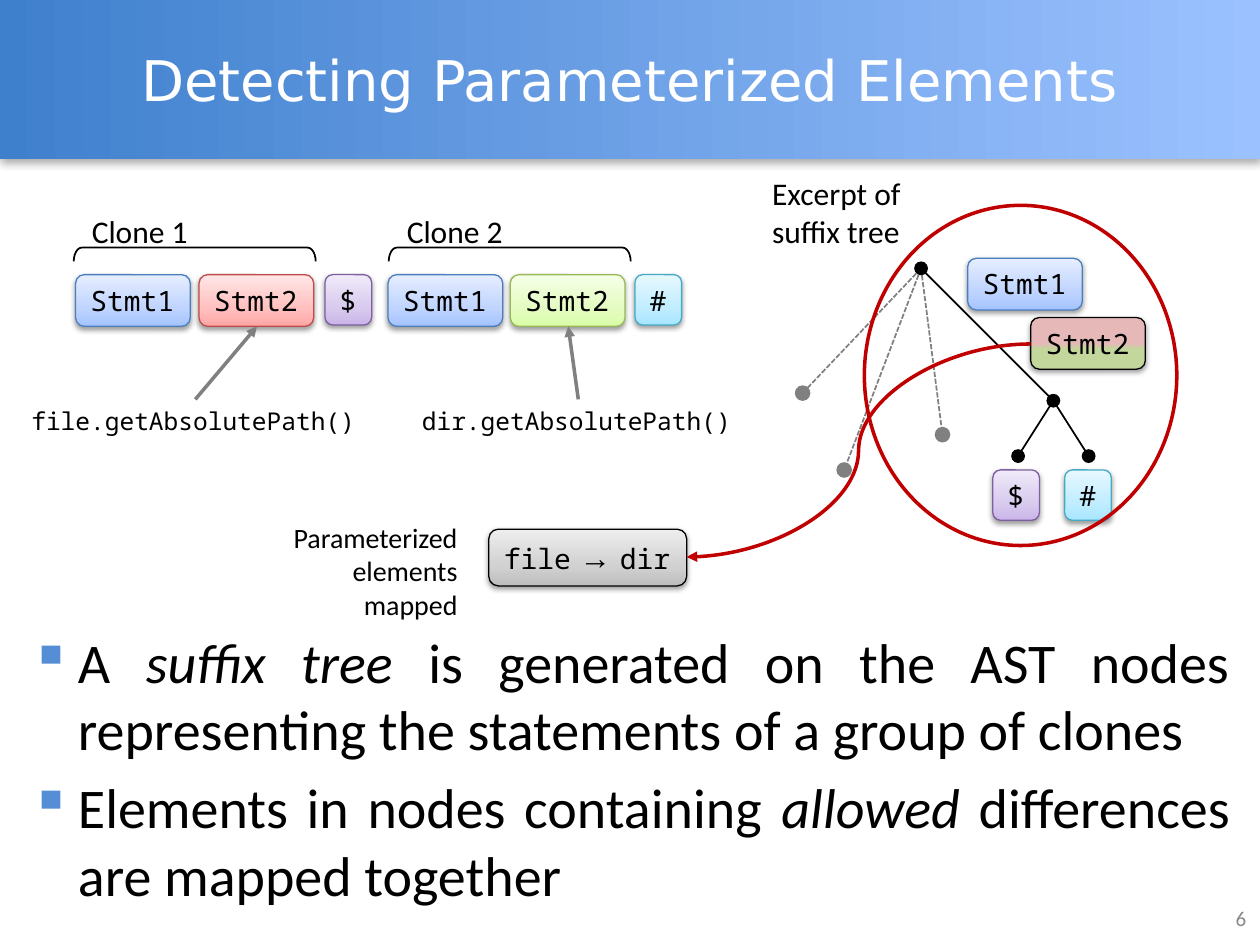
from lxml import etree
from pptx import Presentation
from pptx.dml.color import RGBColor
from pptx.enum.dml import MSO_LINE
from pptx.enum.shapes import MSO_CONNECTOR, MSO_SHAPE
from pptx.enum.text import MSO_ANCHOR, MSO_AUTO_SIZE, PP_ALIGN
from pptx.oxml.ns import qn
from pptx.util import Inches, Pt

LEFT, CENTER, RIGHT, JUSTIFY = PP_ALIGN.LEFT, PP_ALIGN.CENTER, PP_ALIGN.RIGHT, PP_ALIGN.JUSTIFY
TOP, MIDDLE = MSO_ANCHOR.TOP, MSO_ANCHOR.MIDDLE
STRAIGHT, CURVE = MSO_CONNECTOR.STRAIGHT, MSO_CONNECTOR.CURVE

THEME = {
    "title": ("DejaVu Sans", 32, "FFFFFF"),
    "body": ("Calibri", 32, "000000"),
    "label": ("Calibri", 18, "000000"),
    "caption": ("Calibri", 16, "000000"),
    "chip": ("Noto Sans Mono", 16, "000000"),
    "code": ("Noto Sans Mono", 14, "000000"),
    "number": ("Calibri", 12, "898989"),
    "ink": "000000", "muted": "808080", "accent": "C00000", "bullet": "558ED5",
    "band": [(0, "3F80CD"), (100, "9BC1FF")],
    # Chip styles: outline, then gradient stops from bottom to top
    "blue": ("4B7EBC", [(0, "A4C4FF"), (35, "BFD4FF"), (100, "E6EEFF")]),
    "red": ("BF4C48", [(0, "FFA6A5"), (35, "FFC0BF"), (100, "FFE7E7")]),
    "green": ("98B955", [(0, "DAFDA7"), (35, "E4FCC2"), (100, "F5FFE7")]),
    "purple": ("7D60A0", [(0, "C9B5E8"), (35, "D8CBEE"), (100, "F0EAF9")]),
    "cyan": ("46AAC5", [(0, "A7E6FF"), (35, "C1EDFF"), (100, "E7F8FF")]),
    "merged": ("000000", [(39, "C3D69B"), (50, "E6B9B8")]),
    "grey": ("000000", [(0, "BDBDBD"), (35, "D1D1D1"), (100, "EEEEEE")]),
}

# Content: a paragraph is a list of (text, run settings)
TITLE = "Detecting Parameterized Elements"
PAGE = "6"
BULLETS = [
    [("A ", {}), ("suffix tree", {"italic": True}),
     (" is generated on the AST nodes representing the statements of a group of clones", {})],
    [("Elements in nodes containing ", {}), ("allowed", {"italic": True}),
     (" differences are mapped together", {})],
]
STMT, MARK, MAPPING_SIZE = (0.91, 0.41), (0.37, 0.4), (1.57, 0.45)
MAPPING = [("file", {}), (" → ", {"name": "Arial", "size": Pt(18)}), ("dir", {})]
ROW_Y, LEAF_Y = 2.18, 3.73
CHIPS = [  # runs, left, top, size, style
    ([("Stmt1", {})], 0.6, ROW_Y, STMT, "blue"),
    ([("Stmt2", {})], 1.58, ROW_Y, STMT, "red"),
    ([("$", {})], 2.58, ROW_Y, MARK, "purple"),
    ([("Stmt1", {})], 3.08, ROW_Y, STMT, "blue"),
    ([("Stmt2", {})], 4.05, ROW_Y, STMT, "green"),
    ([("#", {})], 5.04, ROW_Y, MARK, "cyan"),
    ([("Stmt1", {})], 7.68, 2.05, STMT, "blue"),
    ([("Stmt2", {})], 8.18, 2.52, STMT, "merged"),
    ([("$", {})], 7.88, LEAF_Y, MARK, "purple"),
    ([("#", {})], 8.45, LEAF_Y, MARK, "cyan"),
    (MAPPING, 3.88, 4.2, MAPPING_SIZE, "grey"),
]
CLONES = [("Clone 1", 0.63), ("Clone 2", 3.13)]
CALLS = [  # code, left, width, arrow start x, arrow end x
    ("file.getAbsolutePath()", 0.15, 2.79, 1.55, 2.04),
    ("dir.getAbsolutePath()", 3.25, 2.67, 4.59, 4.51),
]
NODES = {  # centre, colour
    "root": (7.31, 2.13, "ink"), "fork": (8.36, 3.18, "ink"),
    "leaf $": (8.08, 3.62, "ink"), "leaf #": (8.64, 3.62, "ink"),
    "other 1": (7.48, 3.45, "muted"), "other 2": (6.7, 3.73, "muted"),
    "other 3": (6.37, 3.12, "muted"),
}
EDGES = [("root", "fork"), ("fork", "leaf $"), ("fork", "leaf #"),
         ("root", "other 1"), ("root", "other 2"), ("root", "other 3")]
NODE_SIZE = 0.11


def rgb(value):
    return RGBColor.from_string(value)


def write(frame, paragraphs, style, align=LEFT, anchor=TOP, wrap=True, inset=None):
    name, size, color = THEME[style]
    frame.word_wrap, frame.vertical_anchor = wrap, anchor
    if inset is not None:
        frame.margin_left = frame.margin_right = Inches(inset)
        frame.margin_top = frame.margin_bottom = Inches(inset)
    for index, runs in enumerate(paragraphs):
        paragraph = frame.paragraphs[0] if index == 0 else frame.add_paragraph()
        paragraph.alignment = align
        for text, settings in runs:
            run = paragraph.add_run()
            run.text = text
            run.font.color.rgb = rgb(color)
            for key, value in {"name": name, "size": Pt(size), **settings}.items():
                setattr(run.font, key, value)


def add_text(box, lines, style, **options):
    frame = slide.shapes.add_textbox(*map(Inches, box)).text_frame
    write(frame, [[(line, {})] for line in lines], style, **options)


def add_shape(kind, box, line=None, width=1.0, fill=None):
    shape = slide.shapes.add_shape(kind, *map(Inches, box))
    shape.shadow.inherit = False
    if fill:
        shape.fill.solid()
        shape.fill.fore_color.rgb = rgb(fill)
    else:
        shape.fill.background()
    if line:
        shape.line.color.rgb = rgb(line)
        shape.line.width = Pt(width)
    else:
        shape.line.fill.background()
    return shape


def add_gradient(shape, stops, angle):
    shape.fill.gradient()
    shape.fill.gradient_angle = angle
    stop_list = shape._element.spPr.find(qn("a:gradFill")).find(qn("a:gsLst"))
    del stop_list[:]
    for position, color in stops:
        stop = etree.SubElement(stop_list, qn("a:gs"), pos=str(position * 1000))
        etree.SubElement(stop, qn("a:srgbClr"), val=color)


def add_shadow(shape, opacity, blur, distance):
    effects = shape._element.spPr.find(qn("a:effectLst"))
    shadow = etree.SubElement(effects, qn("a:outerShdw"), blurRad=str(Pt(blur)),
                              dist=str(Pt(distance)), dir="5400000", rotWithShape="0")
    color = etree.SubElement(shadow, qn("a:srgbClr"), val="000000")
    etree.SubElement(color, qn("a:alpha"), val=str(opacity * 1000))


def add_line(start, end, color, width=1, kind=STRAIGHT, dashed=False, arrow=False):
    line = slide.shapes.add_connector(kind, *map(Inches, (*start, *end)))
    line.line.color.rgb = rgb(THEME[color])
    line.line.width = Pt(width)
    if dashed:
        line.line.dash_style = MSO_LINE.SQUARE_DOT
    if arrow:
        etree.SubElement(line.line._get_or_add_ln(), qn("a:tailEnd"), type="triangle")
    etree.SubElement(line._element.spPr, qn("a:effectLst"))


prs = Presentation()
prs.slide_width, prs.slide_height = Inches(10), Inches(7.5)
slide = prs.slides.add_slide(prs.slide_layouts[5])

# Title on its band
title = slide.shapes.title
title.left, title.top, title.width, title.height = map(Inches, (0.5, 0, 9, 1.25))
write(title.text_frame, [[(TITLE, {})]], "title", align=CENTER, anchor=MIDDLE)
band = add_shape(MSO_SHAPE.RECTANGLE, (0, 0, 10, 1.26))
add_gradient(band, THEME["band"], 0)
add_shadow(band, 35, 5, 1.8)
title._element.addprevious(band._element)

# Bulleted text
body = slide.shapes.add_textbox(*map(Inches, (0.14, 4.93, 9.72, 2.16))).text_frame
write(body, BULLETS, "body", align=JUSTIFY)
for index, paragraph in enumerate(body.paragraphs):
    properties = paragraph._p.get_or_add_pPr()
    properties.set("marL", str(Inches(0.38)))
    properties.set("indent", str(-Inches(0.38)))
    bullet_color = etree.SubElement(properties, qn("a:buClr"))
    etree.SubElement(bullet_color, qn("a:srgbClr"), val=THEME["bullet"])
    etree.SubElement(properties, qn("a:buChar"), char="▪")
    if index:
        paragraph.space_before = Pt(6.4)

# Suffix tree
for start, end in EDGES:
    color = NODES[end][2]
    add_line(NODES[start][:2], NODES[end][:2], color, dashed=color == "muted")
for x, y, color in NODES.values():
    add_shape(MSO_SHAPE.OVAL, (x - NODE_SIZE / 2, y - NODE_SIZE / 2, NODE_SIZE, NODE_SIZE),
              line=THEME["muted"] if color == "muted" else None, fill=THEME[color])

# Statement chips
for runs, x, y, size, style in CHIPS:
    outline, stops = THEME[style]
    chip = add_shape(MSO_SHAPE.ROUNDED_RECTANGLE, (x, y, *size), outline, 0.75)
    add_gradient(chip, stops, 90)
    add_shadow(chip, 38, 3.1, 1.6)
    write(chip.text_frame, [runs], "chip", wrap=False)
    chip.text_frame.auto_size = MSO_AUTO_SIZE.SHAPE_TO_FIT_TEXT

# Clone labels with brackets turned to lie above the chips
for label, x in CLONES:
    bracket = add_shape(MSO_SHAPE.LEFT_BRACKET, (x + 0.86, 1.06, 0.11, 1.92), THEME["ink"])
    bracket.adjustments[0] = 0.583
    bracket.rotation = 90
    add_text((x, 1.58, 1.82, 0.47), [label], "label", inset=0.1)

# Calls pointing at their statements
for code, x, width, start_x, end_x in CALLS:
    add_line((start_x, 3.17), (end_x, ROW_Y + STMT[1]), "muted", 2, arrow=True)
    add_text((x, 3.17, width, 0.31), [code], "code", wrap=False)

# Tree excerpt and the mapping drawn from it
add_shape(MSO_SHAPE.OVAL, (6.86, 1.63, 2.48, 2.7), THEME["accent"], 2)
add_line((8.18, 2.73), (5.45, 4.42), "accent", 2, kind=CURVE, arrow=True)
add_text((6.03, 1.28, 1.27, 0.81), ["Excerpt of", "suffix tree"], "label", wrap=False, inset=0.1)
add_text((1.93, 4.08, 1.8, 0.64), ["Parameterized", "elements mapped"], "caption", align=RIGHT)

# Slide number
add_text((8.84, 7.09, 1.15, 0.4), [PAGE], "number", align=RIGHT, anchor=MIDDLE)

prs.save("out.pptx")
